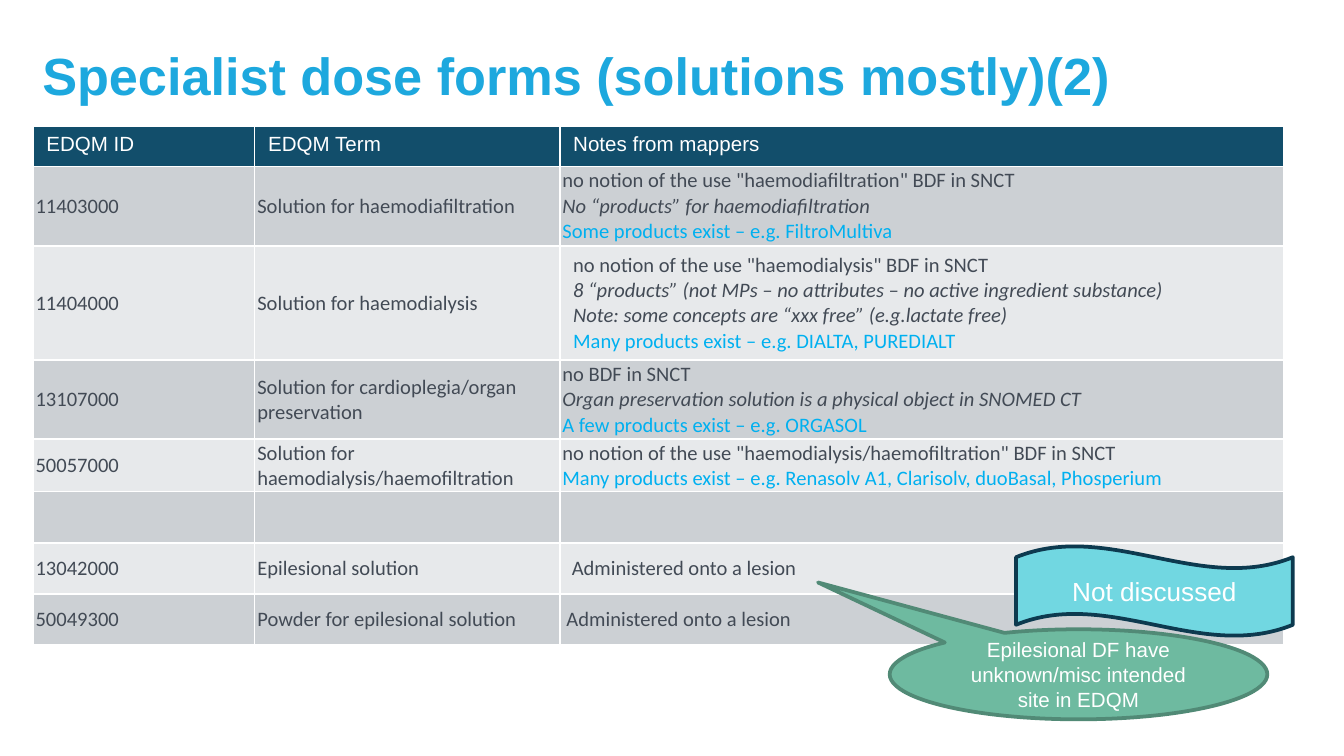
from lxml.etree import SubElement
from pptx import Presentation
from pptx.dml.color import RGBColor
from pptx.enum.shapes import MSO_SHAPE
from pptx.enum.text import MSO_ANCHOR, PP_ALIGN
from pptx.oxml.ns import qn
from pptx.util import Emu, Inches, Pt

# Widescreen, 16 to 9
WIDTH = Inches(10)
HEIGHT = Emu(WIDTH * 9 // 16)
WHITE, TITLE, HEADER = "FFFFFF", "1DA8DE", "124E6B"
BODY, MARKET = "424A55", "00B0F0"
BANDS = ("CCD0D4", "E7E9EB")

# Column widths and row heights in percent of the slide
LEFT = 2.45
COLUMNS = (16.5, 22.7, 53.9)
ROWS = (5.33, 10.49, 15.11, 10.49, 6.93, 6.76, 6.76, 6.76)

HEADINGS = ("EDQM ID", "EDQM Term", "Notes from mappers")
TIGHT = (0.02, 0.01)
ROOMY = (0.1, 0.05)

# Code, term, notes with their style, margins of the notes
DOSE_FORMS = [
    ("11403000", "Solution for haemodiafiltration",
     [('no notion of the use "haemodiafiltration" BDF in SNCT', "plain"),
      ("No “products” for haemodiafiltration", "italic"),
      ("Some products exist – e.g. FiltroMultiva", "market")], TIGHT),
    ("11404000", "Solution for haemodialysis",
     [('no notion of the use "haemodialysis" BDF in SNCT', "plain"),
      ("8 “products” (not MPs – no attributes – no active ingredient substance)",
       "italic"),
      ("Note: some concepts are “xxx free” (e.g.lactate free)", "italic"),
      ("Many products exist – e.g. DIALTA, PUREDIALT", "market")], ROOMY),
    ("13107000", "Solution for cardioplegia/organ preservation",
     [("no BDF in SNCT", "plain"),
      ("Organ preservation solution is a physical object in SNOMED CT", "italic"),
      ("A few products exist – e.g. ORGASOL", "market")], TIGHT),
    ("50057000", "Solution for haemodialysis/haemofiltration",
     [('no notion of the use "haemodialysis/haemofiltration" BDF in SNCT', "plain"),
      ("Many products exist – e.g. Renasolv A1, Clarisolv, duoBasal, Phosperium",
       "market")], TIGHT),
    ("", "", [("", "plain")], TIGHT),
    ("13042000", "Epilesional solution",
     [("Administered onto a lesion", "plain")], (0.09, 0.01)),
    ("50049300", "Powder for epilesional solution",
     [("Administered onto a lesion", "plain")], (0.05, 0.01)),
]
STYLES = {
    "plain": {"color_hex": BODY},
    "italic": {"color_hex": BODY, "italic": True},
    "market": {"color_hex": MARKET},
}


def color(hex_code):
    return RGBColor.from_string(hex_code)


def across(percent):
    return Emu(round(WIDTH * percent / 100))


def down(percent):
    return Emu(round(HEIGHT * percent / 100))


def place(x, y, w, h):
    return across(x), down(y), across(w), down(h)


def write(p, text, *, size=11, font="Calibri", color_hex=BODY,
          bold=False, italic=False, align=None):
    """Put text in a paragraph with the given format."""
    p.alignment = align
    if text:
        p.add_run().text = text
    f = p.runs[0].font if text else p.font
    f.size, f.name, f.bold, f.italic = Pt(size), font, bold, italic
    f.color.rgb = color(color_hex)


def add_borders(cell):
    tc_pr = cell._tc.get_or_add_tcPr()
    for side in "LRTB":
        ln = SubElement(tc_pr, qn(f"a:ln{side}"), w=str(Pt(1)))
        fill = SubElement(ln, qn("a:solidFill"))
        SubElement(fill, qn("a:srgbClr"), val=WHITE)


def format_cell(cell, fill, margins=ROOMY):
    add_borders(cell)
    cell.fill.solid()
    cell.fill.fore_color.rgb = color(fill)
    cell.vertical_anchor = MSO_ANCHOR.TOP if margins == ROOMY else MSO_ANCHOR.MIDDLE
    cell.margin_left, cell.margin_top = map(Inches, margins)
    cell.margin_right, cell.margin_bottom = map(Inches, margins)


def add_title(slide, text):
    sp = slide.shapes.add_textbox(*place(LEFT, 2.31, 86.2, 15.11))
    tf = sp.text_frame
    tf.word_wrap = True
    tf.vertical_anchor = MSO_ANCHOR.MIDDLE
    tf.margin_left = tf.margin_right = Inches(0.07)
    tf.margin_top = tf.margin_bottom = Inches(0.04)
    write(tf.paragraphs[0], text, size=28, font="Arial", color_hex=TITLE, bold=True)


def add_dose_table(slide):
    frame = slide.shapes.add_table(
        len(ROWS), len(COLUMNS), *place(LEFT, 16.71, sum(COLUMNS), sum(ROWS)))
    table = frame.table
    for column, width in zip(table.columns, COLUMNS):
        column.width = across(width)
    for row, height in zip(table.rows, ROWS):
        row.height = down(height)

    # Header row
    for cell, text in zip(table.rows[0].cells, HEADINGS):
        format_cell(cell, HEADER)
        write(cell.text_frame.paragraphs[0], text, font="Arial", color_hex=WHITE)

    # One row for each dose form
    for i, (code, term, notes, margins) in enumerate(DOSE_FORMS):
        cells = table.rows[i + 1].cells
        contents = ([(code, "plain")], [(term, "plain")], notes)
        for cell, lines, inset in zip(cells, contents, (TIGHT, TIGHT, margins)):
            format_cell(cell, BANDS[i % 2], inset)
            tf = cell.text_frame
            for n, (text, style) in enumerate(lines):
                p = tf.add_paragraph() if n else tf.paragraphs[0]
                write(p, text, **STYLES[style])


def add_remark(slide, kind, box, text, fill, line, size):
    sp = slide.shapes.add_shape(kind, *place(*box))
    sp.shadow.inherit = False
    sp.fill.solid()
    sp.fill.fore_color.rgb = color(fill)
    sp.line.color.rgb = color(line)
    sp.line.width = Pt(2)
    tf = sp.text_frame
    tf.word_wrap = True
    tf.vertical_anchor = MSO_ANCHOR.MIDDLE
    write(tf.paragraphs[0], text, size=size, font="Arial", color_hex=WHITE,
          align=PP_ALIGN.CENTER)
    return sp


def main():
    prs = Presentation()
    prs.slide_width, prs.slide_height = WIDTH, HEIGHT
    slide = prs.slides.add_slide(prs.slide_layouts[6])

    add_title(slide, "Specialist dose forms (solutions mostly)(2)")
    add_dose_table(slide)

    # Remarks on the epilesional forms
    callout = add_remark(
        slide, MSO_SHAPE.OVAL_CALLOUT, (66.2, 83.25, 28.1, 11.91),
        "Epilesional DF have unknown/misc intended site in EDQM",
        "6EBAA0", "518A76", 11)
    callout.adjustments[0], callout.adjustments[1] = -0.69, -1.02
    add_remark(slide, MSO_SHAPE.WAVE, (75.6, 72.23, 20.6, 11.91),
               "Not discussed", "71D7E1", "0D3A4F", 14)

    prs.save("out.pptx")


if __name__ == "__main__":
    main()
